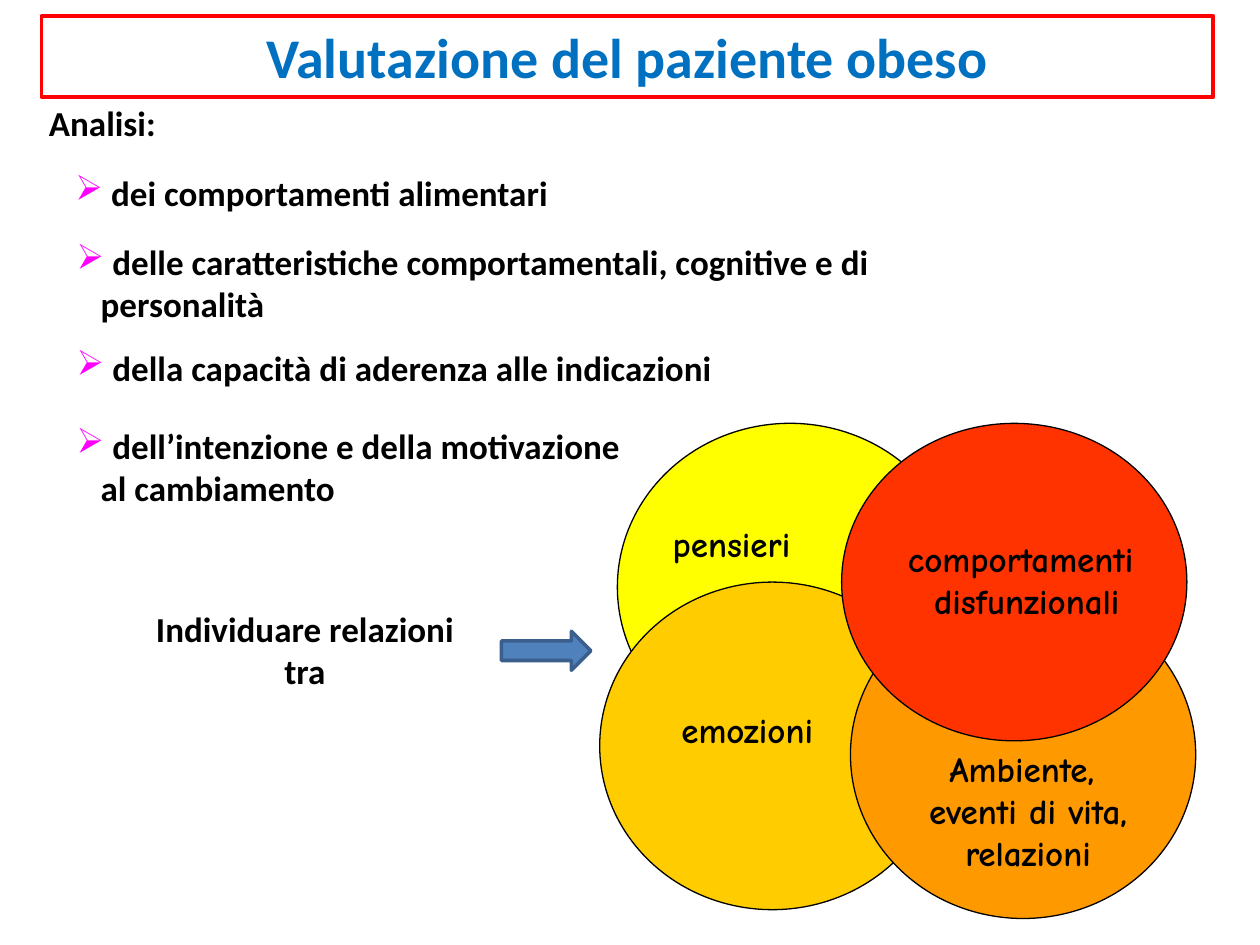
from typing import NamedTuple, Optional

from lxml import etree
from pptx import Presentation
from pptx.dml.color import RGBColor
from pptx.enum.shapes import MSO_SHAPE
from pptx.enum.text import MSO_ANCHOR, MSO_AUTO_SIZE, PP_ALIGN
from pptx.oxml.ns import qn
from pptx.util import Inches, Pt

RECT, OVAL, ARROW = MSO_SHAPE.RECTANGLE, MSO_SHAPE.OVAL, MSO_SHAPE.RIGHT_ARROW
LEFT, CENTER, JUSTIFY = PP_ALIGN.LEFT, PP_ALIGN.CENTER, PP_ALIGN.JUSTIFY
TOP, GROW = MSO_ANCHOR.TOP, MSO_AUTO_SIZE.SHAPE_TO_FIT_TEXT

# Grid of 100 columns by 75 rows
WIDTH, HEIGHT = Inches(10), Inches(7.5)
COLUMN, ROW = WIDTH / 100, HEIGHT / 75

BODY, ROUNDED = "Calibri", "Comic Neue"
COLORS = {
    "black": "000000", "title": "0070C0", "frame": "FF0000", "bullet": "FF00FF",
    "yellow": "FFFF00", "gold": "FFCC00", "orange": "FF9900", "red": "FF3300",
    "arrow": "4F81BD", "arrow edge": "3A5F8C",
}


class Area(NamedTuple):
    column: float
    row: float
    columns: float
    rows: float


class Figure(NamedTuple):
    kind: int
    area: Area
    fill: Optional[str]
    line: str = "black"
    weight: float = 0.75


class Label(NamedTuple):
    area: Area
    lines: tuple
    align: int = JUSTIFY
    font: str = BODY
    bullet: bool = False
    wrap: bool = True


def color(name: str) -> RGBColor:
    return RGBColor.from_string(COLORS[name])


def place(area: Area) -> list:
    return [round(area.column * COLUMN), round(area.row * ROW),
            round(area.columns * COLUMN), round(area.rows * ROW)]


def draw_figure(page, figure: Figure):
    shape = page.shapes.add_shape(figure.kind, *place(figure.area))
    shape.shadow.inherit = False
    if figure.fill:
        shape.fill.solid()
        shape.fill.fore_color.rgb = color(figure.fill)
    else:
        shape.fill.background()
    shape.line.color.rgb = color(figure.line)
    shape.line.width = Pt(figure.weight)
    return shape


def add_bullet(para) -> None:
    properties = para._p.get_or_add_pPr()
    tint = etree.SubElement(properties, qn("a:buClr"))
    etree.SubElement(tint, qn("a:srgbClr"), val=COLORS["bullet"])
    etree.SubElement(properties, qn("a:buChar"), char="➢")


def indent(para) -> None:
    para._p.get_or_add_pPr().set("marL", str(round(1.9 * COLUMN)))


def write(box, lines: tuple, align: int, font: str, size: float, tint: str,
          bullet: bool = False, wrap: bool = True) -> None:
    frame = box.text_frame
    frame.word_wrap = wrap
    frame.auto_size = GROW
    frame.vertical_anchor = TOP
    for index, line in enumerate(lines):
        para = frame.add_paragraph() if index else frame.paragraphs[0]
        para.alignment = align
        if bullet and index == 0:
            add_bullet(para)
        elif bullet:
            indent(para)
        span = para.add_run()
        span.text = line
        span.font.name = font
        span.font.size = Pt(size)
        span.font.bold = True
        span.font.color.rgb = color(tint)


def draw_label(page, label: Label) -> None:
    box = page.shapes.add_textbox(*place(label.area))
    write(box, label.lines, label.align, label.font, 20, "black",
          label.bullet, label.wrap)


TITLE_FRAME = Figure(RECT, Area(3.3, 1.3, 93, 6.4), None, "frame", 2.25)

ANALYSIS = [
    Label(Area(2.9, 7.6, 14.8, 4.4), ("Analisi:",)),
    Label(Area(5, 13.1, 88.3, 4.4), (" dei comportamenti alimentari",), bullet=True),
    Label(Area(5.1, 18.6, 92.5, 7.7),
          (" delle caratteristiche comportamentali, cognitive e di ", "personalità "),
          bullet=True),
    Label(Area(5.1, 27, 91.5, 4.4),
          (" della capacità di aderenza alle indicazioni",), bullet=True),
    Label(Area(5.1, 33.2, 52, 7.7),
          (" dell’intenzione e della motivazione", "al cambiamento"), bullet=True),
    Label(Area(10.6, 47.7, 27.2, 7.7), ("Individuare relazioni tra",), CENTER),
]

CIRCLES = [
    Figure(OVAL, Area(49, 33.6, 27.4, 26), "yellow"),
    Figure(OVAL, Area(47.6, 46.2, 27.4, 26), "gold"),
    Figure(OVAL, Area(67.5, 46.9, 27.4, 26), "orange"),
    Figure(OVAL, Area(66.8, 33.6, 27.4, 25.2), "red"),
]

CIRCLE_LABELS = [
    Label(Area(52.4, 41, 12.4, 4.4), ("pensieri",), LEFT, ROUNDED, wrap=False),
    Label(Area(71, 58.8, 21.2, 11.1), ("Ambiente, ", "eventi di vita,", "relazioni"),
          CENTER, ROUNDED, wrap=False),
    Label(Area(53.1, 55.7, 13.3, 4.4), ("emozioni",), LEFT, ROUNDED, wrap=False),
    Label(Area(68.1, 42.2, 26.8, 7.7), ("comportamenti ", "disfunzionali"),
          CENTER, ROUNDED),
]

POINTER = Figure(ARROW, Area(39.8, 50.1, 7.1, 3.1), "arrow", "arrow edge", 2)


def main() -> None:
    deck = Presentation()
    deck.slide_width, deck.slide_height = WIDTH, HEIGHT
    page = deck.slides.add_slide(deck.slide_layouts[6])

    # Framed title
    title = draw_figure(page, TITLE_FRAME)
    write(title, ("Valutazione del paziente obeso",), CENTER, BODY, 32, "title")

    # Points of the analysis
    for label in ANALYSIS:
        draw_label(page, label)

    # Overlapping circles with their names
    for circle in CIRCLES:
        draw_figure(page, circle)
    for label in CIRCLE_LABELS:
        draw_label(page, label)

    # Arrow towards the circles
    draw_figure(page, POINTER)
    deck.save("out.pptx")


if __name__ == "__main__":
    main()
